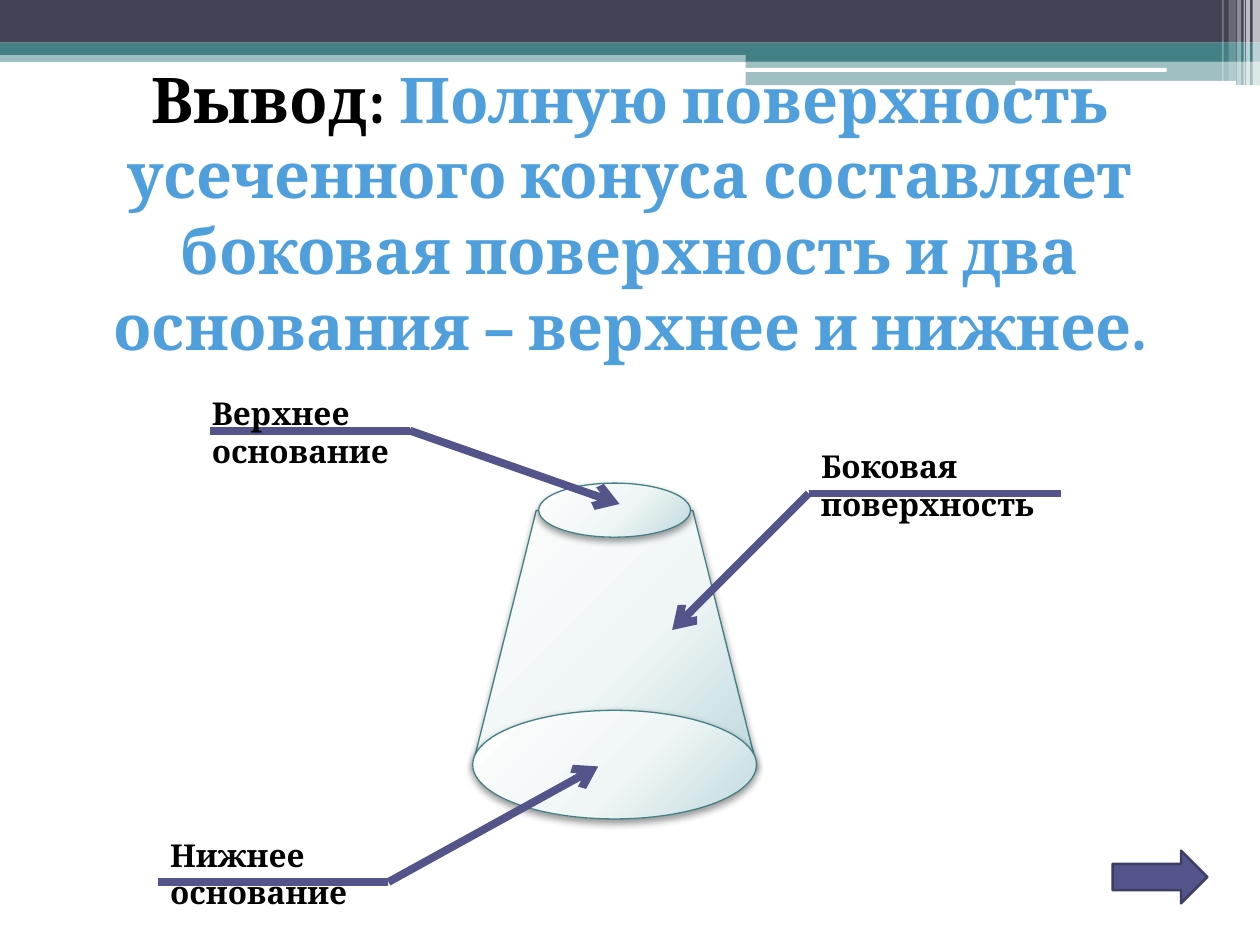
from lxml.etree import SubElement
from pptx import Presentation
from pptx.dml.color import RGBColor
from pptx.enum.shapes import MSO_CONNECTOR, MSO_SHAPE
from pptx.enum.text import MSO_ANCHOR, MSO_AUTO_SIZE, PP_ALIGN
from pptx.oxml import parse_xml
from pptx.oxml.ns import nsdecls, qn
from pptx.util import Cm, Pt

WHITE = RGBColor(0xFF, 0xFF, 0xFF)
BLACK = RGBColor(0x00, 0x00, 0x00)
SLATE = RGBColor(0x42, 0x44, 0x56)
TEAL = RGBColor(0x43, 0x80, 0x86)
BLUE = RGBColor(0x4E, 0x9F, 0xDB)
VIOLET = RGBColor(0x53, 0x54, 0x8A)
DARK_VIOLET = RGBColor(0x3D, 0x3E, 0x66)

GLASS = f"""<a:gradFill {nsdecls('a')} rotWithShape="1"><a:gsLst>
<a:gs pos="0"><a:srgbClr val="FEFEFE"/></a:gs>
<a:gs pos="55000"><a:srgbClr val="F0F6F6"/></a:gs>
<a:gs pos="100000"><a:srgbClr val="BFD9DD"/></a:gs></a:gsLst>
<a:path path="circle"><a:fillToRect l="-40000" t="-90000" r="140000" b="190000"/></a:path>
</a:gradFill>"""
SOFT_SHADOW = f"""<a:effectLst {nsdecls('a')}>
<a:outerShdw blurRad="{Pt(4.1)}" dist="{Pt(2)}" dir="5400000" rotWithShape="0">
<a:srgbClr val="000000"><a:alpha val="40000"/></a:srgbClr></a:outerShdw></a:effectLst>"""


class Painter:
    def __init__(self, slide, font):
        self.s = slide
        self.font = font

    def shape(self, kind, box, fill, alpha=100, line=None, width=1.5):
        sp = self.s.shapes.add_shape(kind, *map(Cm, box))
        sp.shadow.inherit = False
        sp.fill.solid()
        sp.fill.fore_color.rgb = fill
        if alpha < 100:
            color = sp._element.spPr.find(qn("a:solidFill"))[0]
            SubElement(color, qn("a:alpha"), val=str(alpha * 1000))
        if line is None:
            sp.line.fill.background()
        else:
            sp.line.color.rgb = line
            sp.line.width = Pt(width)
        return sp

    def glass(self, group, kind, box):
        """Add a shaded part of the cone to the group."""
        sp = group.shapes.add_shape(kind, *map(Cm, box))
        sp.line.color.rgb = TEAL
        sp.line.width = Pt(0.75)
        spPr = sp._element.spPr
        spPr.find(qn("a:ln")).addprevious(parse_xml(GLASS))
        spPr.append(parse_xml(SOFT_SHADOW))
        return sp

    def line(self, start, end, arrow=False):
        cx = self.s.shapes.add_connector(
            MSO_CONNECTOR.STRAIGHT, *map(Cm, start + end))
        cx.line.color.rgb = VIOLET
        cx.line.width = Pt(4.5)
        if arrow:
            SubElement(cx.line._get_or_add_ln(), qn("a:tailEnd"), type="arrow")
        SubElement(cx._element.spPr, qn("a:effectLst"))

    def text(self, box, runs, size, align=PP_ALIGN.LEFT, anchor=MSO_ANCHOR.TOP,
             fit=MSO_AUTO_SIZE.SHAPE_TO_FIT_TEXT):
        """Add bold text; runs are (wording, colour) pairs."""
        tf = self.s.shapes.add_textbox(*map(Cm, box)).text_frame
        tf.word_wrap = True
        tf.auto_size = fit
        tf.vertical_anchor = anchor
        p = tf.paragraphs[0]
        p.alignment = align
        p.font.name = self.font
        p.font.size = Pt(size)
        p.font.bold = True
        for wording, color in runs:
            r = p.add_run()
            r.text = wording
            r.font.color.rgb = color


def draw_header(painter):
    bars = [
        ((0, 1.02, 25.4, 0.23), TEAL, 50),
        ((0, 0, 25.4, 0.86), SLATE, 100),
        ((0, 0.86, 25.4, 0.25), TEAL, 100),
        ((15.03, 0.99, 10.37, 0.25), TEAL, 100),
        ((15.03, 1.22, 10.37, 0.5), TEAL, 50),
    ]
    for box, color, alpha in bars:
        painter.shape(MSO_SHAPE.RECTANGLE, box, color, alpha)
    for box in [(15.01, 1.37, 8.51, 0.08), (20.47, 1.63, 4.45, 0.1)]:
        painter.shape(MSO_SHAPE.ROUNDED_RECTANGLE, box, WHITE)
    stripes = [  # left, width, height, opacity
        (25.25, 0.15, 1.73, 65), (25.12, 0.08, 1.73, 65),
        (25.07, 0.03, 1.73, 60), (24.94, 0.08, 1.73, 40),
        (24.77, 0.15, 1.63, 20), (24.64, 0.03, 1.63, 30),
    ]
    for left, width, height, alpha in stripes:
        painter.shape(MSO_SHAPE.RECTANGLE, (left, 0, width, height), WHITE, alpha)


def draw_cone(painter):
    cone = painter.s.shapes.add_group_shape()
    side = painter.glass(cone, MSO_SHAPE.TRAPEZOID, (9.53, 10.29, 5.72, 5.13))
    side.adjustments[0] = 0.25
    painter.glass(cone, MSO_SHAPE.OVAL, (9.53, 14.32, 5.72, 2.19))
    painter.glass(cone, MSO_SHAPE.OVAL, (10.86, 9.74, 3.06, 1.09))


def main():
    prs = Presentation()
    prs.slide_width, prs.slide_height = Cm(25.4), Cm(19.05)
    painter = Painter(prs.slides.add_slide(prs.slide_layouts[6]), "Cambria")

    draw_header(painter)
    painter.text(
        (0, 1.47, 25.4, 5.59),
        [("Вывод: ", BLACK),
         ("Полную поверхность усеченного конуса составляет боковая "
          "поверхность и два основания – верхнее и нижнее.", BLUE)],
        36, PP_ALIGN.CENTER, MSO_ANCHOR.MIDDLE, MSO_AUTO_SIZE.NONE)

    callouts = [  # wording, text box, underline end, bend, arrow tip
        ("Верхнее основание", (4.02, 7.82, 4.23, 1.8),
         (4.23, 8.68), (8.26, 8.68), (12.49, 10.16)),
        ("Нижнее основание", (3.18, 16.72, 4.66, 1.8),
         (3.18, 17.78), (7.83, 17.78), (12.06, 15.45)),
        ("Боковая поверхность", (16.3, 8.89, 5.08, 1.8),
         (21.38, 9.95), (16.3, 9.95), (13.55, 12.7)),
    ]
    for wording, box, end, bend, tip in callouts:
        painter.line(bend, end)
    for wording, box, end, bend, tip in callouts:
        painter.text(box, [(wording, BLACK)], 18)
    painter.shape(MSO_SHAPE.RIGHT_ARROW, (22.43, 17.15, 1.91, 1.06),
                  VIOLET, line=DARK_VIOLET)
    draw_cone(painter)
    for wording, box, end, bend, tip in callouts:
        painter.line(bend, tip, arrow=True)

    prs.save("out.pptx")


if __name__ == "__main__":
    main()
